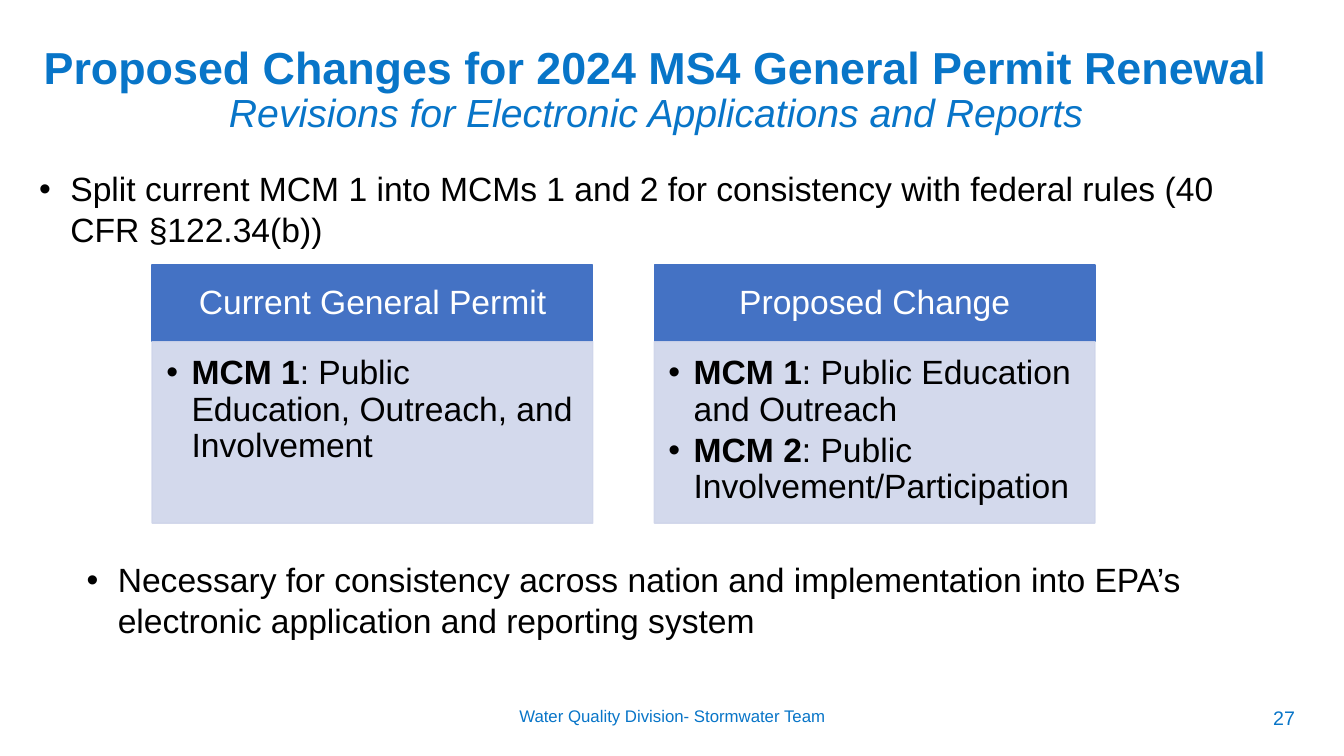
from dataclasses import dataclass

from lxml.etree import SubElement as Sub
from pptx import Presentation as Deck
from pptx.dml.color import RGBColor as Rgb
from pptx.enum.shapes import MSO_SHAPE as Kind
from pptx.enum.text import MSO_ANCHOR as Anchor, PP_ALIGN as Align
from pptx.oxml.ns import qn
from pptx.shapes.autoshape import Shape
from pptx.slide import Slide
from pptx.text.text import TextFrame as Frame, _Paragraph as Para
from pptx.util import Emu, Pt

PX = 9144


@dataclass(frozen=True)
class Theme:
    font: str = "Arial"
    blue: str = "0875C8"
    ink: str = "000000"
    white: str = "FFFFFF"
    head: str = "4472C4"
    body: str = "CFD5EA"
    alpha: int = 90
    title: int = 32
    sub: int = 28
    text: int = 24
    foot: int = 12
    page: int = 14
    tight: float = 0.9
    gap: float = 3.6


@dataclass(frozen=True)
class Box:
    x: int
    y: int
    w: int
    h: int

    def emu(self) -> list[Emu]:
        return [Emu(n * PX) for n in (self.x, self.y, self.w, self.h)]


@dataclass(frozen=True)
class Point:
    box: Box
    left: int
    text: str


@dataclass(frozen=True)
class Label:
    box: Box
    size: int
    text: str


@dataclass(frozen=True)
class Card:
    head: str
    items: tuple[tuple[str, str], ...]


T = Theme()
TITLE = Box(29, 40, 1243, 68)
POINTS = (
    Point(Box(29, 162, 1224, 91), 31,
          "Split current MCM 1 into MCMs 1 and 2 for consistency with federal rules (40 CFR §122.34(b))"),
    Point(Box(26, 550, 1178, 91), 81,
          "Necessary for consistency across nation and implementation into EPA’s electronic application and reporting system"),
)
LABELS = (
    Label(Box(442, 695, 450, 40), T.foot, "Water Quality Division- Stormwater Team"),
    Label(Box(1229, 695, 89, 40), T.page, "27"),
)
CARDS = (
    Card("Current General Permit",
         (("MCM 1", ": Public Education, Outreach, and Involvement"),)),
    Card("Proposed Change",
         (("MCM 1", ": Public Education and Outreach"),
          ("MCM 2", ": Public Involvement/Participation"))),
)
LEFT, TOP, WIDE, STEP = 151, 263, 437, 498
HEAD, BODY = 76, 180


def style(para: Para, size: int, tint: str) -> None:
    para.font.name = T.font
    para.font.size = Pt(size)
    para.font.color.rgb = Rgb.from_string(tint)


def bullet(para: Para, left: int, hang: int) -> None:
    props = para._p.get_or_add_pPr()
    props.set("marL", str(left * PX))
    props.set("indent", str(-hang * PX))
    Sub(props, qn("a:buFont"), typeface=T.font)
    Sub(props, qn("a:buChar"), char="•")


def inset(frame: Frame, left: int, top: int, right: int, foot: int) -> None:
    frame.margin_left, frame.margin_top = Emu(left * PX), Emu(top * PX)
    frame.margin_right, frame.margin_bottom = Emu(right * PX), Emu(foot * PX)


def text_box(slide: Slide, box: Box) -> Frame:
    frame = slide.shapes.add_textbox(*box.emu()).text_frame
    frame.word_wrap = True
    return frame


def panel(slide: Slide, box: Box, tint: str) -> Shape:
    shape = slide.shapes.add_shape(Kind.RECTANGLE, *box.emu())
    shape.shadow.inherit = False
    shape.fill.solid()
    shape.fill.fore_color.rgb = Rgb.from_string(tint)
    shape.line.color.rgb = Rgb.from_string(tint)
    shape.line.width = Pt(1)
    shape.text_frame.word_wrap = True
    return shape


def fade(shape: Shape) -> None:
    for tint in shape._element.spPr.iter(qn("a:srgbClr")):
        Sub(tint, qn("a:alpha"), val=str(T.alpha * 1000))


def draw_title(slide: Slide) -> None:
    para = text_box(slide, TITLE).paragraphs[0]
    para.alignment = Align.CENTER
    para.line_spacing = T.tight
    style(para, T.title, T.blue)
    main = para.add_run()
    main.text = "Proposed Changes for 2024 MS4 General Permit Renewal"
    main.font.bold = True
    para.add_line_break()
    sub = para.add_run()
    sub.text = "Revisions for Electronic Applications and Reports"
    sub.font.size = Pt(T.sub)
    sub.font.italic = True


def draw_point(slide: Slide, point: Point) -> None:
    para = text_box(slide, point.box).paragraphs[0]
    para.text = point.text
    bullet(para, point.left, 31)
    style(para, T.text, T.ink)


def draw_label(slide: Slide, label: Label) -> None:
    para = text_box(slide, label.box).paragraphs[0]
    para.text = label.text
    para.alignment = Align.CENTER
    style(para, label.size, T.blue)


def draw_card(slide: Slide, card: Card, x: int) -> None:
    head = panel(slide, Box(x, TOP, WIDE, HEAD), T.head).text_frame
    head.vertical_anchor = Anchor.MIDDLE
    inset(head, 19, 11, 19, 11)
    para = head.paragraphs[0]
    para.text = card.head
    para.alignment = Align.CENTER
    para.line_spacing = T.tight
    style(para, T.text, T.white)

    shape = panel(slide, Box(x, TOP + HEAD, WIDE, BODY), T.body)
    fade(shape)
    body = shape.text_frame
    body.vertical_anchor = Anchor.TOP
    inset(body, 14, 14, 19, 21)
    for i, (name, text) in enumerate(card.items):
        para = body.add_paragraph() if i else body.paragraphs[0]
        para.alignment = Align.LEFT
        para.line_spacing = T.tight
        para.space_after = Pt(T.gap)
        bullet(para, 25, 25)
        style(para, T.text, T.ink)
        lead = para.add_run()
        lead.text = name
        lead.font.bold = True
        para.add_run().text = text


def main() -> None:
    deck = Deck()
    deck.slide_width, deck.slide_height = Emu(1333 * PX), Emu(750 * PX)
    slide = deck.slides.add_slide(deck.slide_layouts[6])
    draw_title(slide)
    for i, card in enumerate(CARDS):
        draw_card(slide, card, LEFT + i * STEP)
    for point in POINTS:
        draw_point(slide, point)
    for label in LABELS:
        draw_label(slide, label)
    deck.save("out.pptx")


if __name__ == "__main__":
    main()
